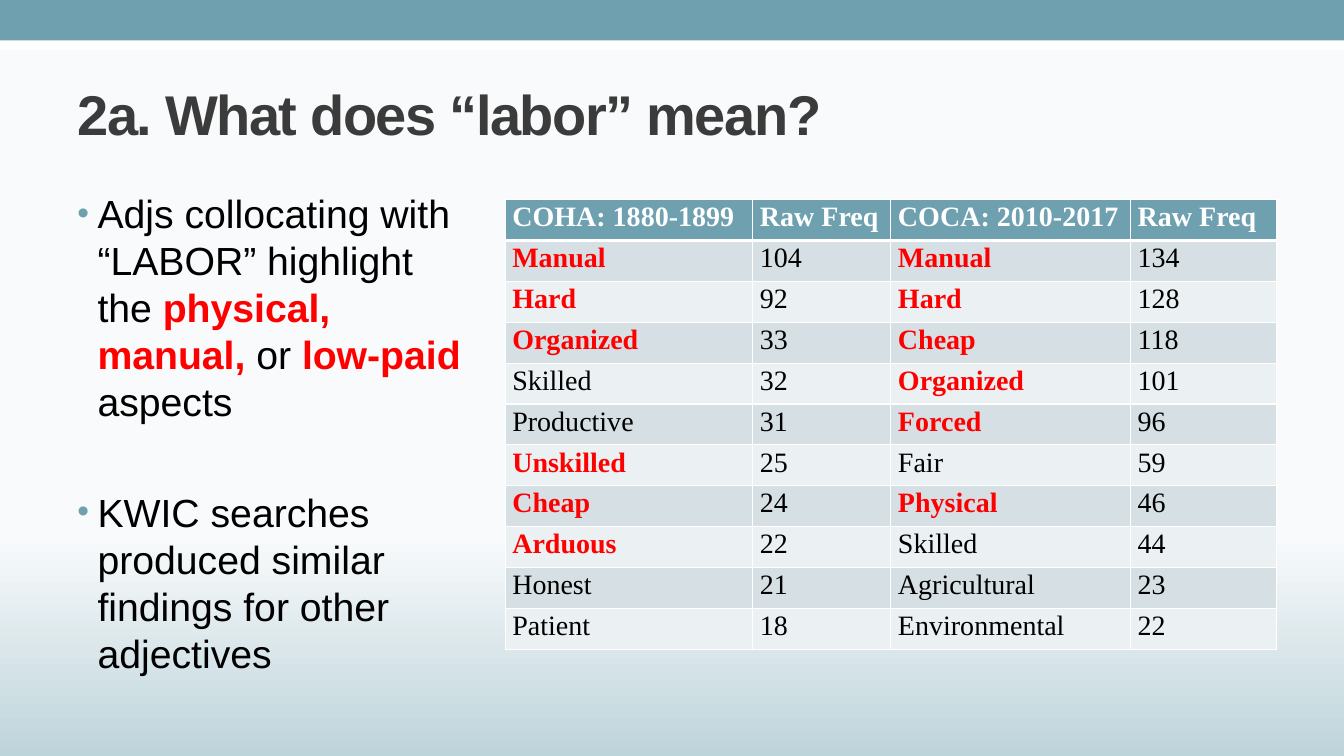
"""Slide on the adjectives that collocate with "labor"."""
from dataclasses import dataclass

import pptx
import pptx.dml.color
import pptx.enum.shapes
import pptx.enum.text
import pptx.oxml.ns
import pptx.util
from lxml import etree
from pptx.util import Cm


@dataclass(frozen=True)
class Theme:
    """Colours, fonts and type sizes of the slide."""
    teal: str = "6EA0B0"
    white: str = "FFFFFF"
    black: str = "000000"
    red: str = "FF0000"
    heading: str = "3B3B3B"
    sky: str = "F8FAFB"
    mist: str = "BED4DB"
    bands: tuple = ("EBF0F2", "D5DFE4")
    sans: str = "Arial"
    serif: str = "Times New Roman"
    title_size: int = 40
    body_size: int = 28
    table_size: int = 20


THEME = Theme()
HEADER = ("COHA: 1880-1899", "Raw Freq", "COCA: 2010-2017", "Raw Freq")
COLLOCATES = (
    ("Manual", "104", "Manual", "134"),
    ("Hard", "92", "Hard", "128"),
    ("Organized", "33", "Cheap", "118"),
    ("Skilled", "32", "Organized", "101"),
    ("Productive", "31", "Forced", "96"),
    ("Unskilled", "25", "Fair", "59"),
    ("Cheap", "24", "Physical", "46"),
    ("Arduous", "22", "Skilled", "44"),
    ("Honest", "21", "Agricultural", "23"),
    ("Patient", "18", "Environmental", "22"),
)
HIGHLIGHTED = {"Manual", "Hard", "Organized", "Unskilled", "Cheap", "Arduous",
               "Forced", "Physical"}
COLUMN_WIDTHS = (6.24, 3.48, 6.04, 3.68)
ROW_HEIGHT = 1.03
FINDINGS = (
    (("Adjs collocating with “LABOR” highlight the ", False),
     ("physical, manual, ", True), ("or ", False),
     ("low-paid ", True), ("aspects", False)),
    (("KWIC searches produced similar findings for other adjectives", False),),
)
FINDINGS_GAP = 45


def rgb(code):
    """Return a colour from its hex code."""
    return pptx.dml.color.RGBColor.from_string(code)


def add_element(parent, tag, **attributes):
    """Append a DrawingML element to a parent."""
    return etree.SubElement(parent, pptx.oxml.ns.qn(tag), attributes)


def add_run(paragraph, words, font, size, color, bold=False):
    """Append one formatted run and return it."""
    run = paragraph.add_run()
    run.text = words
    run.font.name = font
    run.font.size = pptx.util.Pt(size)
    run.font.bold = bold
    run.font.color.rgb = rgb(color)
    return run


def paint_background(slide):
    """Fade the background from sky to mist at the bottom."""
    fill = slide.background.fill
    fill.gradient()
    fill.gradient_angle = 270
    for stop, position, color in zip(fill.gradient_stops, (0.71, 1),
                                     (THEME.sky, THEME.mist)):
        stop.position = position
        stop.color.rgb = rgb(color)


def add_band(slide, top, height, color):
    """Add a plain band across the slide."""
    band = slide.shapes.add_shape(pptx.enum.shapes.MSO_SHAPE.RECTANGLE,
                                  0, Cm(top), Cm(33.87), Cm(height))
    band.shadow.inherit = False
    band.fill.solid()
    band.fill.fore_color.rgb = rgb(color)
    band.line.fill.background()


def add_text_frame(slide, left, top, width, height):
    """Add a wrapping text box and return its frame."""
    frame = slide.shapes.add_textbox(Cm(left), Cm(top), Cm(width), Cm(height)).text_frame
    frame.word_wrap = True
    return frame


def add_title(slide, words):
    """Add the slide heading."""
    frame = add_text_frame(slide, 1.7, 1.47, 30.48, 2.74)
    frame.vertical_anchor = pptx.enum.text.MSO_ANCHOR.MIDDLE
    run = add_run(frame.paragraphs[0], words, THEME.sans, THEME.title_size,
                  THEME.heading, True)
    run.font._element.set("spc", "-100")


def add_bullet(paragraph):
    """Give a paragraph a hanging teal bullet."""
    properties = paragraph._p.get_or_add_pPr()
    properties.set("marL", str(Cm(0.51)))
    properties.set("indent", str(-Cm(0.51)))
    add_element(add_element(properties, "a:buClr"), "a:srgbClr", val=THEME.teal)
    add_element(properties, "a:buSzPct", val="85000")
    add_element(properties, "a:buFont", typeface=THEME.sans)
    add_element(properties, "a:buChar", char="•")


def add_findings(slide):
    """Add the bulleted findings beside the table."""
    frame = add_text_frame(slide, 1.7, 4.65, 10.52, 13.11)
    for index, finding in enumerate(FINDINGS):
        paragraph = frame.add_paragraph() if index else frame.paragraphs[0]
        paragraph.space_before = pptx.util.Pt(FINDINGS_GAP * index)
        add_bullet(paragraph)
        for words, stressed in finding:
            add_run(paragraph, words, THEME.sans, THEME.body_size,
                    THEME.red if stressed else THEME.black, stressed)


def add_borders(cell, bottom):
    """Draw white cell borders with the given bottom width in points."""
    properties = cell._tc.get_or_add_tcPr()
    for side, width in (("L", 1), ("R", 1), ("T", 1), ("B", bottom)):
        line = add_element(properties, f"a:ln{side}", w=str(pptx.util.Pt(width)))
        add_element(add_element(line, "a:solidFill"), "a:srgbClr", val=THEME.white)


def fill_cell(cell, words, fill, color, bold, bottom=1):
    """Write and style one table cell."""
    cell.margin_left = cell.margin_right = Cm(0.18)
    cell.margin_top = cell.margin_bottom = 0
    add_borders(cell, bottom)
    cell.fill.solid()
    cell.fill.fore_color.rgb = rgb(fill)
    paragraph = cell.text_frame.paragraphs[0]
    paragraph.alignment = pptx.enum.text.PP_ALIGN.JUSTIFY
    paragraph.line_spacing = 1.07
    add_run(paragraph, words, THEME.serif, THEME.table_size, color, bold)


def add_collocates(slide):
    """Add the table of adjectives and raw frequencies."""
    row_count = len(COLLOCATES) + 1
    table = slide.shapes.add_table(row_count, len(HEADER), Cm(12.73), Cm(5.03),
                                   Cm(sum(COLUMN_WIDTHS)),
                                   Cm(ROW_HEIGHT * row_count)).table
    for column, width in zip(table.columns, COLUMN_WIDTHS):
        column.width = Cm(width)
    for row in table.rows:
        row.height = Cm(ROW_HEIGHT)
    for index, heading in enumerate(HEADER):
        fill_cell(table.cell(0, index), heading, THEME.teal, THEME.white, True, 3)
    for row, entries in enumerate(COLLOCATES, 1):
        for index, entry in enumerate(entries):
            stressed = entry in HIGHLIGHTED
            fill_cell(table.cell(row, index), entry, THEME.bands[row % 2],
                      THEME.red if stressed else THEME.black, stressed)


def main():
    """Build the slide and save it."""
    deck = pptx.Presentation()
    deck.slide_width, deck.slide_height = Cm(33.87), Cm(19.05)
    slide = deck.slides.add_slide(deck.slide_layouts[6])
    paint_background(slide)
    add_band(slide, 0.61, 0.64, THEME.white)
    add_band(slide, 0, 1.02, THEME.teal)
    add_title(slide, "2a. What does “labor” mean?")
    add_findings(slide)
    add_collocates(slide)
    deck.save("out.pptx")


if __name__ == "__main__":
    main()
